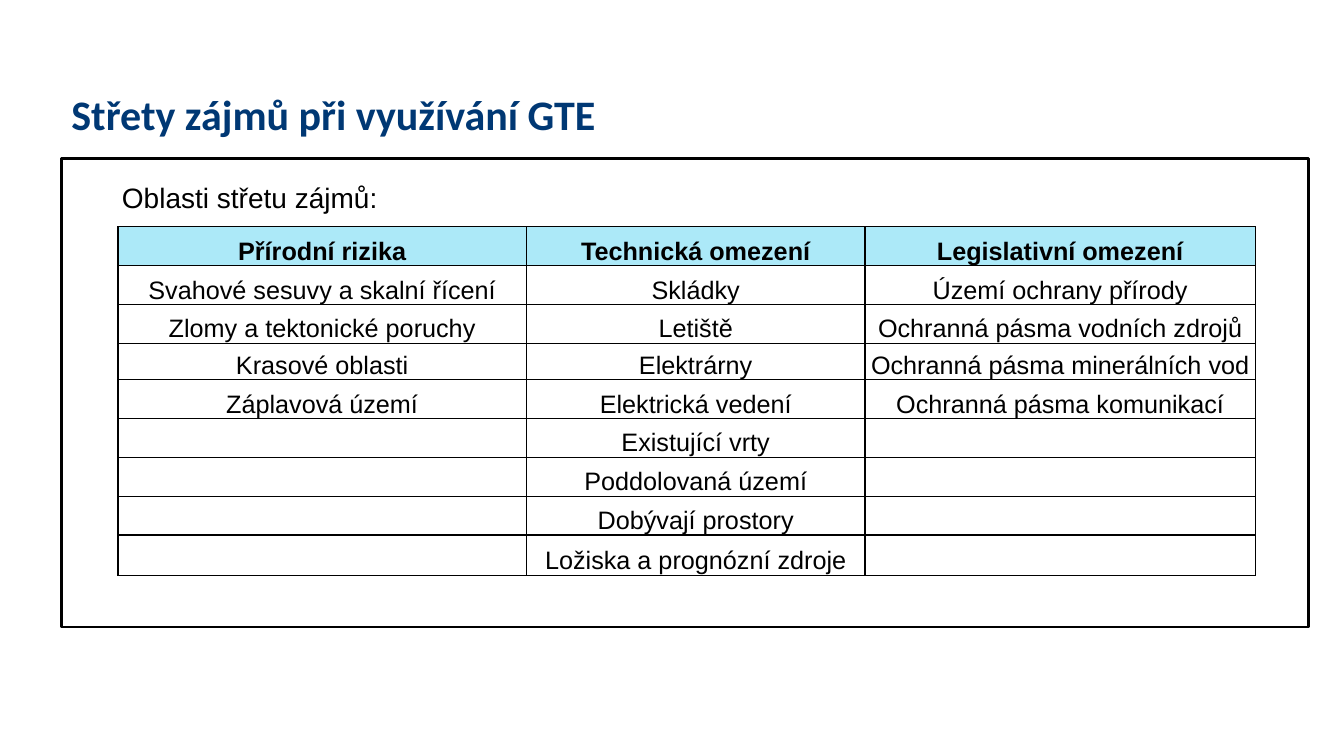
from lxml import etree
from pptx import Presentation
from pptx.dml.color import RGBColor
from pptx.enum.shapes import MSO_SHAPE as Shape
from pptx.enum.text import MSO_ANCHOR as Anchor, PP_ALIGN as Align
from pptx.oxml.ns import qn
from pptx.util import Inches, Pt

NAVY = RGBColor(0x00, 0x38, 0x74)
BLACK = RGBColor(0x00, 0x00, 0x00)
WHITE = RGBColor(0xFF, 0xFF, 0xFF)
AQUA = RGBColor(0xAC, 0xE9, 0xF8)

HEADS = ["Přírodní rizika", "Technická omezení", "Legislativní omezení"]
RISKS = ["Svahové sesuvy a skalní řícení", "Zlomy a tektonické poruchy",
         "Krasové oblasti", "Záplavová území"]
LIMITS = ["Skládky", "Letiště", "Elektrárny", "Elektrická vedení",
          "Existující vrty", "Poddolovaná území", "Dobývají prostory",
          "Ložiska a prognózní zdroje"]
LAWS = ["Území ochrany přírody", "Ochranná pásma vodních zdrojů",
        "Ochranná pásma minerálních vod", "Ochranná pásma komunikací"]

WIDTHS = [4.05, 3.36, 3.87]
ROW = (3.46 - 0.36 - 0.4) / 7
HEIGHTS = [ROW] * 3 + [0.36] + [ROW] * 4 + [0.4]


class Deck:
    def __init__(self):
        self.prs = Presentation()
        self.prs.slide_width, self.prs.slide_height = Inches(13.33), Inches(7.5)
        self.slide = self.prs.slides.add_slide(self.prs.slide_layouts[6])
        self.font = "Arial"

    def label(self, para, text, size, color=BLACK, bold=False, font=None):
        run = para.add_run()
        run.text = text
        run.font.name = font or self.font
        run.font.size = Pt(size)
        run.font.bold = bold
        run.font.color.rgb = color

    def title(self, box, text):
        frame = self.slide.shapes.add_textbox(*map(Inches, box)).text_frame
        frame.word_wrap = True
        frame.vertical_anchor = Anchor.BOTTOM
        self.label(frame.paragraphs[0], text, 30, NAVY, True, "Calibri")

    def panel(self, box, text):
        """Add the framed area with its lead-in line."""
        rect = self.slide.shapes.add_shape(Shape.RECTANGLE, *map(Inches, box))
        rect.shadow.inherit = False
        rect.fill.solid()
        rect.fill.fore_color.rgb = WHITE
        rect.line.color.rgb = BLACK
        rect.line.width = Pt(2)
        frame = rect.text_frame
        frame.word_wrap = True
        frame.vertical_anchor = Anchor.TOP
        frame.margin_left = Inches(0.6)
        para = frame.paragraphs[0]
        para.alignment = Align.LEFT
        para.line_spacing = 1.5
        self.label(para, text, 20)

    def border(self, cell):
        props = cell._tc.get_or_add_tcPr()
        for place, side in enumerate(("lnL", "lnR", "lnT", "lnB")):
            line = etree.Element(qn(f"a:{side}"), w=str(Pt(1)))
            fill = etree.SubElement(line, qn("a:solidFill"))
            etree.SubElement(fill, qn("a:srgbClr"), val=str(BLACK))
            props.insert(place, line)

    def cell(self, cell, text, head):
        cell.margin_left = cell.margin_right = cell.margin_top = Inches(0.01)
        cell.margin_bottom = 0
        cell.vertical_anchor = Anchor.BOTTOM
        cell.fill.solid()
        cell.fill.fore_color.rgb = AQUA if head else WHITE
        self.border(cell)
        if text:
            para = cell.text_frame.paragraphs[0]
            para.alignment = Align.CENTER
            self.label(para, text, 18, bold=head)

    def table(self, left, top, heads, lists):
        size = left, top, sum(WIDTHS), sum(HEIGHTS)
        grid = self.slide.shapes.add_table(
            len(HEIGHTS), len(WIDTHS), *map(Inches, size)).table
        for row, height in zip(grid.rows, HEIGHTS):
            row.height = Inches(height)
        for col, (head, items) in enumerate(zip(heads, lists)):
            grid.columns[col].width = Inches(WIDTHS[col])
            texts = [head] + items
            for row in range(len(HEIGHTS)):
                text = texts[row] if row < len(texts) else ""
                self.cell(grid.cell(row, col), text, row == 0)


def main():
    deck = Deck()
    deck.title((0.61, 0.67, 11.29, 0.76), "Střety zájmů při využívání GTE")
    deck.panel((0.61, 1.57, 12.37, 4.65), "Oblasti střetu zájmů:")
    deck.table(1.17, 2.25, HEADS, [RISKS, LIMITS, LAWS])
    deck.prs.save("out.pptx")


if __name__ == "__main__":
    main()
